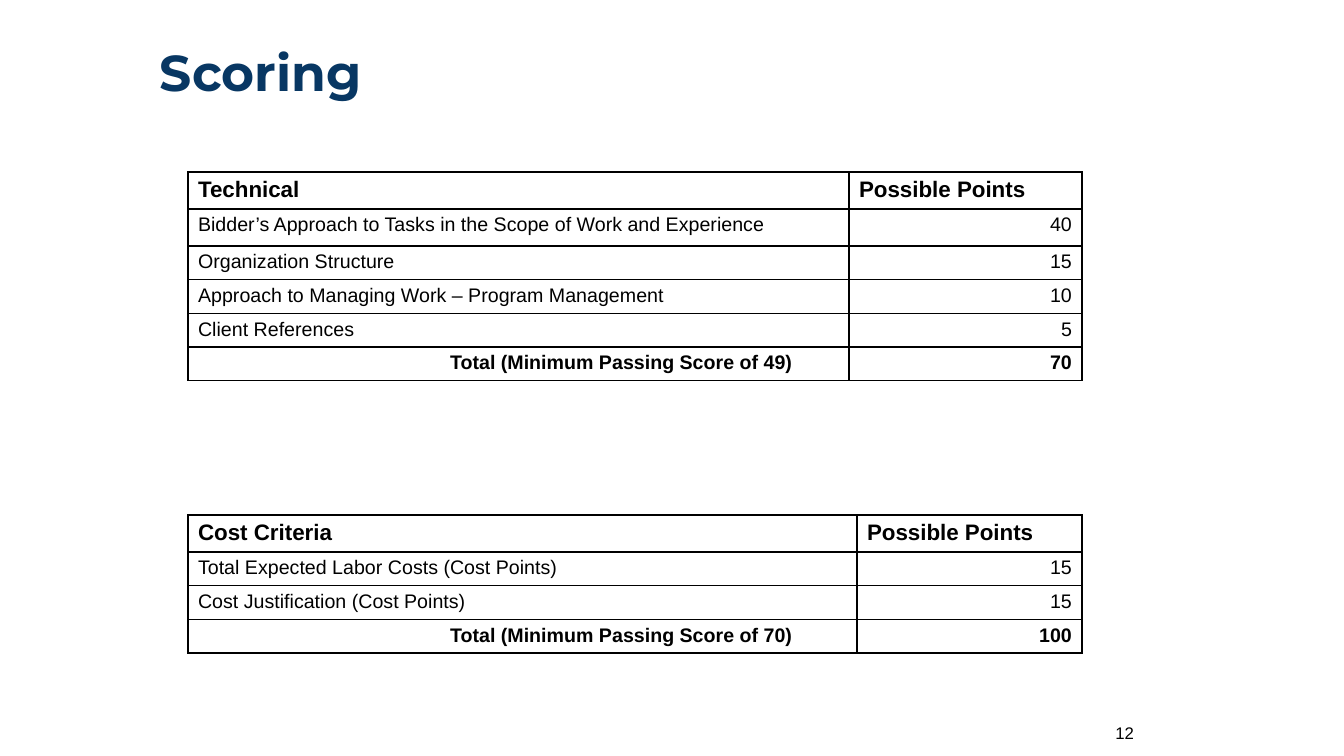
from lxml import etree
from pptx import Presentation
from pptx.dml.color import RGBColor
from pptx.enum.text import MSO_ANCHOR, PP_ALIGN
from pptx.oxml.ns import qn
from pptx.util import Emu, Pt

MIDDLE = MSO_ANCHOR.MIDDLE
LEFT, RIGHT = PP_ALIGN.LEFT, PP_ALIGN.RIGHT
SCALE = 914400 / 100.8
BLACK = "000000"


def px(n):
    return Emu(round(n * SCALE))


def write(para, text, size, bold=False, align=LEFT, font="Arial", color=BLACK):
    para.alignment = align
    run = para.add_run()
    run.text = text
    run.font.name = font
    run.font.size = Pt(size)
    run.font.bold = bold
    run.font.color.rgb = RGBColor.from_string(color)


deck = Presentation()
deck.slide_width, deck.slide_height = px(1344), px(756)
slide = deck.slides.add_slide(deck.slide_layouts[6])

labels = [
    ((150, 18, 1098, 115), "Scoring", 36, True, LEFT, "Montserrat", "083763"),
    ((950, 713, 194, 40), "12", 12, False, RIGHT, "Arial", BLACK),
]
for place, *style in labels:
    frame = slide.shapes.add_textbox(*map(px, place)).text_frame
    frame.word_wrap = True
    frame.vertical_anchor = MIDDLE
    para = frame.paragraphs[0]
    para.line_spacing = 0.9 if style[0] == "Scoring" else 1.0
    write(para, *style)

tables = [
    (172, (661, 233), (35, 37, 32, 32, 32, 32), [
        ("Technical", "Possible Points"),
        ("Bidder’s Approach to Tasks in the Scope of Work and Experience", "40"),
        ("Organization Structure", "15"),
        ("Approach to Managing Work – Program Management", "10"),
        ("Client References", "5"),
        ("Total (Minimum Passing Score of 49)", "70"),
    ]),
    (515, (669, 225), (35, 32, 32, 32), [
        ("Cost Criteria", "Possible Points"),
        ("Total Expected Labor Costs (Cost Points)", "15"),
        ("Cost Justification (Cost Points)", "15"),
        ("Total (Minimum Passing Score of 70)", "100"),
    ]),
]
for top, widths, heights, rows in tables:
    last = len(rows) - 1
    place = (188, top, sum(widths), sum(heights))
    table = slide.shapes.add_table(len(rows), 2, *map(px, place)).table
    table.first_row = table.horz_banding = False
    for col, width in zip(table.columns, widths):
        col.width = px(width)
    for r, (height, texts) in enumerate(zip(heights, rows)):
        table.rows[r].height = px(height)
        for c, text in enumerate(texts):
            cell = table.cell(r, c)
            para = cell.text_frame.paragraphs[0]
            align = RIGHT if r and c else LEFT
            write(para, text, 14 if r else 16, r in (0, last), align)
            if r == last and c == 0:
                props = para._p.get_or_add_pPr()
                props.set("marL", str(px(252)))
                props.set("indent", "0")
            props = cell._tc.get_or_add_tcPr()
            for side in ("a:lnL", "a:lnR", "a:lnT", "a:lnB"):
                line = etree.SubElement(props, qn(side), w=str(Pt(1)))
                fill = etree.SubElement(line, qn("a:solidFill"))
                etree.SubElement(fill, qn("a:srgbClr"), val=BLACK)
            cell.fill.background()

deck.save("out.pptx")
